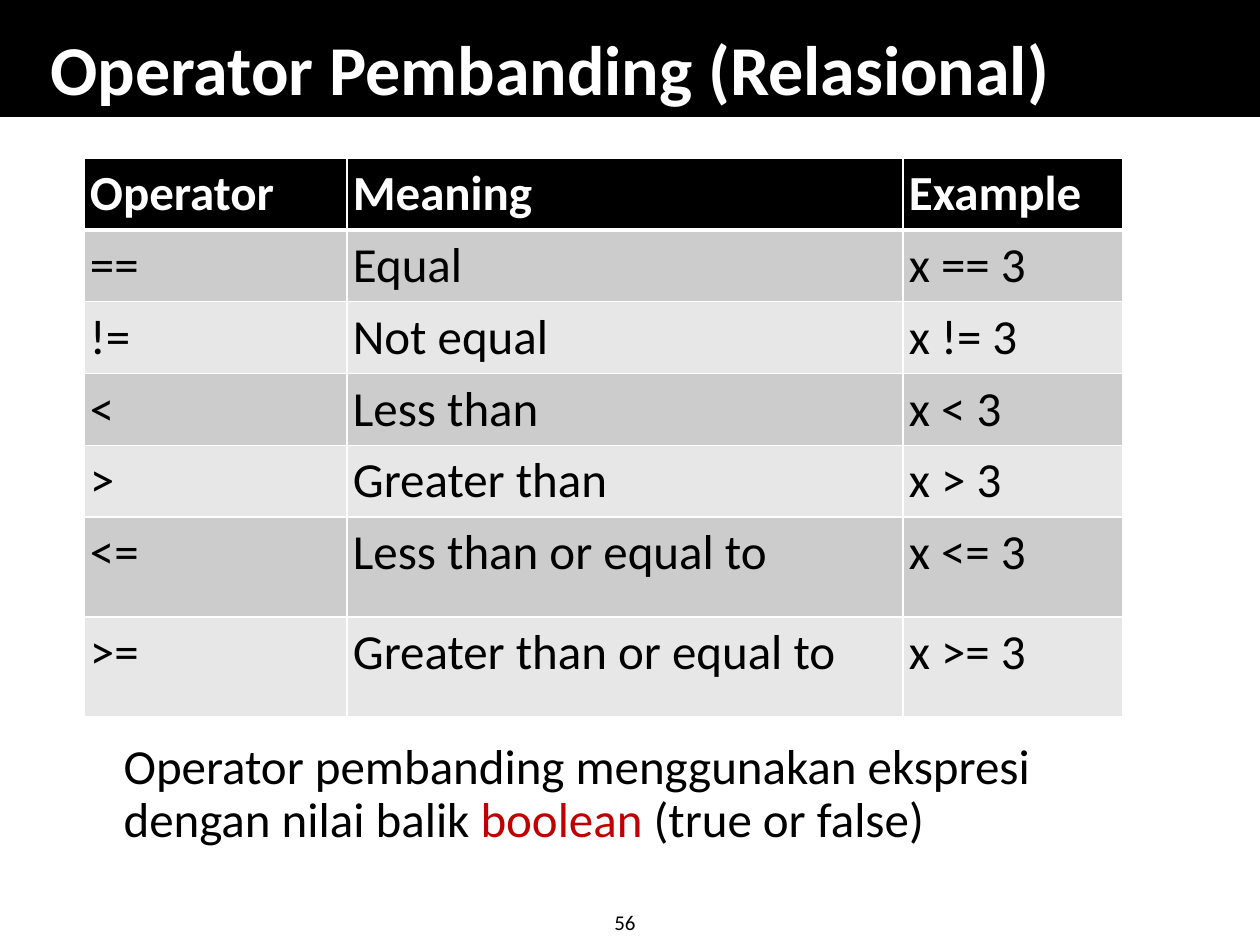
from pptx import Presentation
from pptx.dml.color import RGBColor as Color
from pptx.enum.shapes import MSO_SHAPE as Shape
from pptx.enum.text import MSO_ANCHOR as Anchor, MSO_AUTO_SIZE as AutoSize, PP_ALIGN as Align
from pptx.oxml.ns import qn
from pptx.util import Emu, Pt
from lxml.etree import SubElement

PX_PER_INCH = 126
COLORS = {
    "black": "000000",
    "white": "FFFFFF",
    "red": "C00000",
    "dark_row": "CCCCCC",
    "light_row": "E7E7E7",
}
OPERATORS = [
    ("Operator", "Meaning", "Example"),
    ("==", "Equal", "x == 3"),
    ("!=", "Not equal", "x != 3"),
    ("<", "Less than", "x < 3"),
    (">", "Greater than", "x > 3"),
    ("<=", "Less than or equal to", "x <= 3"),
    (">=", "Greater than or equal to", "x >= 3"),
]
COLUMN_WIDTHS = [263, 556, 220]
ROW_HEIGHTS = [66] * 5 + [100] * 2


def px(length):
    return Emu(round(length * 914400 / PX_PER_INCH))


def color(name):
    return Color.from_string(COLORS[name])


def apply(target, values):
    for name, value in values.items():
        setattr(target, name, value)


class SlideBuilder:
    font = "Calibri"

    def __init__(self, page):
        self.page = page

    def place(self, item, left, top, width, height):
        apply(item, {"left": px(left), "top": px(top),
                     "width": px(width), "height": px(height)})

    def add_spans(self, para, spans, size, bold=False):
        for text, tone in spans:
            span = para.add_run()
            span.text = text
            apply(span.font, {"name": self.font, "size": Pt(size), "bold": bold})
            span.font.color.rgb = color(tone)

    def band(self, left, top, width, height):
        box = self.page.shapes.add_shape(Shape.RECTANGLE, *map(px, (left, top, width, height)))
        box.shadow.inherit = False
        box.fill.solid()
        box.fill.fore_color.rgb = color("black")
        box.line.color.rgb = color("black")
        box.line.width = Pt(1)
        self.page.shapes._spTree.insert(2, box._element)

    def title(self, text, *area):
        box = self.page.shapes.title
        self.place(box, *area)
        apply(box.text_frame, {"vertical_anchor": Anchor.BOTTOM, "auto_size": AutoSize.NONE})
        para = box.text_frame.paragraphs[0]
        para.alignment = Align.LEFT
        self.add_spans(para, [(text, "white")], 40, True)

    def body(self, spans, *area):
        box = self.page.placeholders[1]
        self.place(box, *area)
        box.text_frame.auto_size = AutoSize.NONE
        para = box.text_frame.paragraphs[0]
        layout = para._p.get_or_add_pPr()
        layout.set("marL", str(px(48)))
        layout.set("indent", "0")
        SubElement(layout, qn("a:buNone"))
        apply(para, {"line_spacing": 0.9, "space_before": Pt(0), "space_after": Pt(3)})
        self.add_spans(para, spans, 28)

    def label(self, text, *area):
        box = self.page.shapes.add_textbox(*map(px, area))
        apply(box.text_frame, {"word_wrap": False, "auto_size": AutoSize.SHAPE_TO_FIT_TEXT})
        self.add_spans(box.text_frame.paragraphs[0], [(text, "black")], 12)

    def borders(self, cell, widths):
        properties = cell._tc.get_or_add_tcPr()
        for side, width in widths.items():
            line = SubElement(properties, qn(f"a:ln{side}"), w=str(Pt(width)))
            fill = SubElement(line, qn("a:solidFill"))
            SubElement(fill, qn("a:srgbClr"), val=COLORS["white"])

    def table(self, rows, widths, heights, left, top, height):
        frame = self.page.shapes.add_table(
            len(rows), len(widths), *map(px, (left, top, sum(widths), height)))
        table = frame.table
        for column, width in zip(table.columns, widths):
            column.width = px(width)
        for row, row_height in zip(table.rows, heights):
            row.height = px(row_height)
        frame.height = px(height)
        margins = {f"margin_{side}": px(6) for side in ("left", "top", "right", "bottom")}
        for index, texts in enumerate(rows):
            header = index == 0
            fill = "black" if header else "dark_row" if index % 2 else "light_row"
            tone = "white" if header else "black"
            edges = {"L": 1, "R": 1, "T": 3 if index == 1 else 1, "B": 3 if header else 1}
            for cell, text in zip(table.rows[index].cells, texts):
                apply(cell, margins)
                self.borders(cell, edges)
                cell.fill.solid()
                cell.fill.fore_color.rgb = color(fill)
                self.add_spans(cell.text_frame.paragraphs[0], [(text, tone)], 28, header)


def main():
    deck = Presentation()
    apply(deck, {"slide_width": px(1260), "slide_height": px(945)})
    builder = SlideBuilder(deck.slides.add_slide(deck.slide_layouts[1]))
    builder.band(0, 0, 1260, 116)
    builder.title("Operator Pembanding (Relasional)", 38, 26, 1179, 90)
    builder.body([
        ("Operator pembanding menggunakan ekspresi dengan nilai balik ", "black"),
        ("boolean", "red"),
        (" (true or false)", "black"),
    ], 63, 736, 1134, 125)
    builder.table(OPERATORS, COLUMN_WIDTHS, ROW_HEIGHTS, 84, 158, 559)
    builder.label("56", 602, 903, 52, 38)
    deck.save("out.pptx")


if __name__ == "__main__":
    main()
